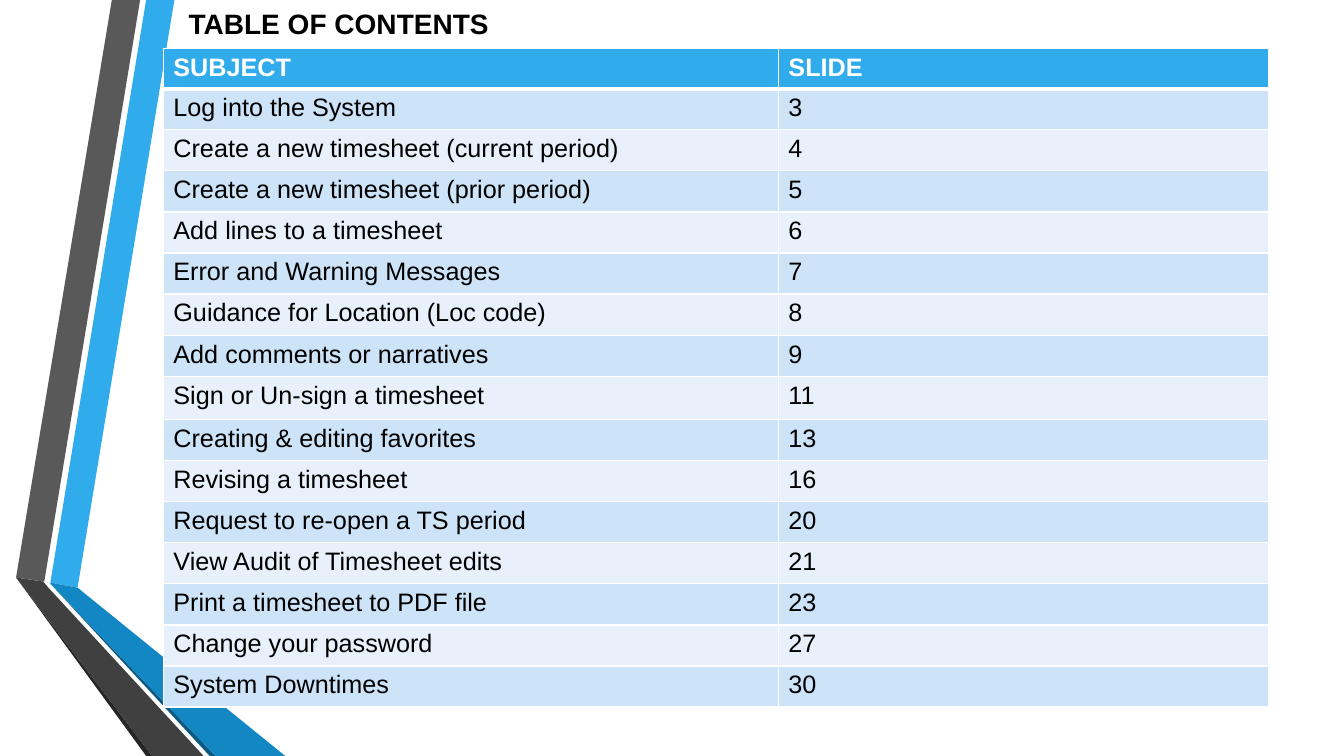
from lxml.etree import SubElement
from pptx import Presentation
from pptx.dml.color import RGBColor
from pptx.enum.text import MSO_ANCHOR, PP_ALIGN
from pptx.oxml.ns import qn
from pptx.util import Inches, Pt

TITLE = "TABLE OF CONTENTS"
HEADINGS = ("SUBJECT", "SLIDE")
CONTENTS = [
    ("Log into the System", 3),
    ("Create a new timesheet (current period)", 4),
    ("Create a new timesheet (prior period)", 5),
    ("Add lines to a timesheet", 6),
    ("Error and Warning Messages", 7),
    ("Guidance for Location (Loc code)", 8),
    ("Add comments or narratives", 9),
    ("Sign or Un-sign a timesheet", 11),
    ("Creating & editing favorites", 13),
    ("Revising a timesheet", 16),
    ("Request to re-open a TS period", 20),
    ("View Audit of Timesheet edits", 21),
    ("Print a timesheet to PDF file", 23),
    ("Change your password", 27),
    ("System Downtimes", 30),
]
RIBBONS = [
    ("blue", [(0.5, 5.78), (0.77, 5.83), (1.73, 0), (1.45, 0)]),
    ("gray", [(1.39, 0), (1.11, 0), (0.16, 5.73), (0.44, 5.77)]),
    ("gray_edge", [(0.16, 5.73), (1.45, 7.5), (1.51, 7.5)]),
    ("blue_edge", [(0.5, 5.79), (2.08, 7.5), (2.14, 7.5)]),
    ("blue_fold", [(0.5, 5.79), (2.14, 7.5), (2.83, 7.5), (0.77, 5.83), (0.5, 5.78)]),
    ("gray_fold", [(2.02, 7.5), (0.48, 5.83), (0.43, 5.77), (0.16, 5.73), (1.51, 7.5)]),
]
THEME = {
    "font": "Arial",
    "title_size": Pt(20),
    "table_size": Pt(18),
    "thin_rule": Pt(1),
    "thick_rule": Pt(3),
    "blue": "30ACEC",
    "gray": "595959",
    "gray_edge": "262626",
    "blue_edge": "0C5A82",
    "blue_fold": "1287C3",
    "gray_fold": "404040",
    "bands": ("CDE3F8", "E8F1FB"),
    "text": "000000",
    "white": "FFFFFF",
}
TABLE_LEFT, TABLE_TOP, TABLE_HEIGHT = 1.62, 0.48, 6.54
COLUMN_WIDTHS = (6.1, 4.86)
HEADER_HEIGHT, TALL_HEIGHT = 0.4, 0.43
TALL_ROW = 8


def set_all(target, values):
    for attribute, value in values.items():
        setattr(target, attribute, value)


def paint(fill, color):
    fill.solid()
    fill.fore_color.rgb = RGBColor.from_string(color)


def style_text(paragraph, size, color, bold):
    set_all(paragraph.font, {"name": THEME["font"], "size": size, "bold": bold})
    paragraph.font.color.rgb = RGBColor.from_string(color)


def add_ribbon(slide, color, points):
    start, *corners = [(Inches(x), Inches(y)) for x, y in points]
    builder = slide.shapes.build_freeform(*start)
    builder.add_line_segments(corners, close=True)
    ribbon = builder.convert_to_shape()
    ribbon.shadow.inherit = False
    paint(ribbon.fill, color)
    ribbon.line.fill.background()


def add_borders(cell, row_index):
    properties = cell._tc.get_or_add_tcPr()
    thick_side = {0: "lnB", 1: "lnT"}.get(row_index)
    for side in ("lnL", "lnR", "lnT", "lnB"):
        width = THEME["thick_rule" if side == thick_side else "thin_rule"]
        border = SubElement(properties, qn(f"a:{side}"), w=str(width))
        solid = SubElement(border, qn("a:solidFill"))
        SubElement(solid, qn("a:srgbClr"), val=THEME["white"])


def add_title(slide):
    title = slide.shapes.title
    set_all(title, {"left": Inches(1.77), "top": Inches(0),
                    "width": Inches(7.8), "height": Inches(0.46)})
    title.text_frame.text = TITLE
    set_all(title.text_frame, {"vertical_anchor": MSO_ANCHOR.MIDDLE, "word_wrap": True})
    heading = title.text_frame.paragraphs[0]
    heading.alignment = PP_ALIGN.LEFT
    style_text(heading, THEME["title_size"], THEME["text"], True)


def add_contents(slide):
    rows = [HEADINGS, *CONTENTS]
    contents = slide.shapes.add_table(
        len(rows), len(HEADINGS), Inches(TABLE_LEFT), Inches(TABLE_TOP),
        Inches(sum(COLUMN_WIDTHS)), Inches(TABLE_HEIGHT)).table
    for column, width in zip(contents.columns, COLUMN_WIDTHS):
        column.width = Inches(width)
    row_height = (TABLE_HEIGHT - HEADER_HEIGHT - TALL_HEIGHT) / (len(rows) - 2)
    heights = {0: HEADER_HEIGHT, TALL_ROW: TALL_HEIGHT}
    for row_index, entry in enumerate(rows):
        is_header = row_index == 0
        contents.rows[row_index].height = Inches(heights.get(row_index, row_height))
        background = THEME["blue"] if is_header else THEME["bands"][(row_index - 1) % 2]
        color = THEME["white" if is_header else "text"]
        for column_index, value in enumerate(entry):
            cell = contents.cell(row_index, column_index)
            cell.text = str(value)
            style_text(cell.text_frame.paragraphs[0], THEME["table_size"], color, is_header)
            add_borders(cell, row_index)
            paint(cell.fill, background)


def main():
    presentation = Presentation()
    set_all(presentation, {"slide_width": Inches(13.33), "slide_height": Inches(7.5)})
    slide = presentation.slides.add_slide(presentation.slide_layouts[5])
    paint(slide.background.fill, THEME["white"])
    for color_name, points in RIBBONS:
        add_ribbon(slide, THEME[color_name], points)
    add_title(slide)
    add_contents(slide)
    presentation.save("out.pptx")


if __name__ == "__main__":
    main()
